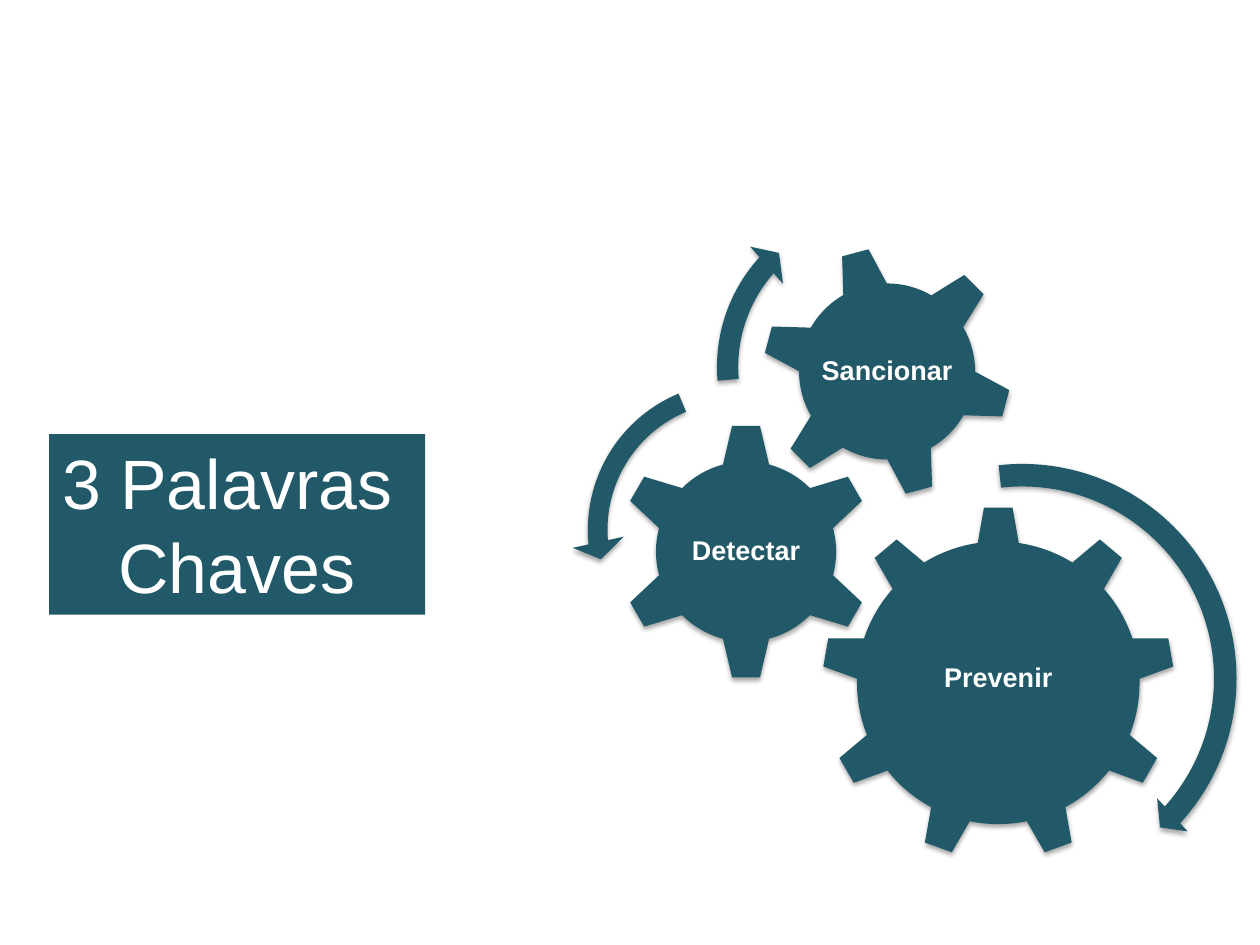
from lxml import etree
from pptx import Presentation
from pptx.dml.color import RGBColor
from pptx.enum.shapes import MSO_SHAPE
from pptx.enum.text import MSO_ANCHOR, MSO_AUTO_SIZE, PP_ALIGN
from pptx.oxml.ns import qn
from pptx.util import Cm, Pt

RECT = MSO_SHAPE.RECTANGLE
GEAR_6, GEAR_9 = MSO_SHAPE.GEAR_6, MSO_SHAPE.GEAR_9
ARROW, LEFT_ARROW = MSO_SHAPE.CIRCULAR_ARROW, MSO_SHAPE.LEFT_CIRCULAR_ARROW
CENTER = PP_ALIGN.CENTER
TOP, MIDDLE = MSO_ANCHOR.TOP, MSO_ANCHOR.MIDDLE
FIT_SHAPE = MSO_AUTO_SIZE.SHAPE_TO_FIT_TEXT

COLORS = {"teal": "215968", "white": "FFFFFF", "shadow": "000000"}
FONT = "Arial"

# Text, gear type, x, y, size, rotation, label width, label height, label shift (cm)
GEARS = [
    ("Prevenir", GEAR_9, 5.56, 7.03, 7.85, 0, 4.7, 4.04, -0.08),
    ("Detectar", GEAR_6, 1.02, 5.18, 5.72, 0, 2.84, 2.82, 0),
    ("Sancionar", GEAR_6, 4.22, 1.24, 5.59, -15, 3.15, 3.15, 0),
]
# Arrow type, x, y, size (cm), adjustments
ARROWS = [
    (ARROW, 5, 5.84, 10.03, (0.05, 2.99, 25.35, 158.22, 0.05)),
    (LEFT_ARROW, 0, 3.91, 7.29, (0.06, 4.3, 104.89, 148.38, 0.08)),
    (ARROW, 2.92, 0, 7.87, (0.06, 3.94, 133.14, 105.08, 0.07)),
]


def color(name):
    return RGBColor.from_string(COLORS[name])


def add_solid(shapes, kind, x, y, w, h):
    s = shapes.add_shape(kind, Cm(x), Cm(y), Cm(w), Cm(h))
    s.shadow.inherit = False
    s.fill.solid()
    s.fill.fore_color.rgb = color("teal")
    s.line.fill.background()
    return s


def add_shadow(s):
    effects = s._element.spPr.find(qn("a:effectLst"))
    shadow = etree.SubElement(effects, qn("a:outerShdw"), blurRad=str(Pt(3.1)),
                              dist=str(Pt(1.8)), dir="5400000", rotWithShape="0")
    tint = etree.SubElement(shadow, qn("a:srgbClr"), val=COLORS["shadow"])
    etree.SubElement(tint, qn("a:alpha"), val="35000")


def add_text(p, text, size, bold=False):
    p.alignment = CENTER
    r = p.add_run()
    r.text = text
    r.font.name = FONT
    r.font.size = Pt(size)
    r.font.bold = bold
    r.font.color.rgb = color("white")


def add_title(sl, x, y, w, h):
    s = add_solid(sl.shapes, RECT, x, y, w, h)
    tf = s.text_frame
    tf.word_wrap = False
    tf.auto_size = FIT_SHAPE
    tf.vertical_anchor = TOP
    add_text(tf.paragraphs[0], "3 Palavras ", 44)
    add_text(tf.add_paragraph(), "Chaves", 44)


def add_label(shapes, text, x, y, w, h):
    tf = shapes.add_textbox(Cm(x), Cm(y), Cm(w), Cm(h)).text_frame
    tf.word_wrap = True
    tf.vertical_anchor = MIDDLE
    tf.margin_left = tf.margin_right = tf.margin_top = tf.margin_bottom = Cm(0.05)
    p = tf.paragraphs[0]
    p.line_spacing = 0.9
    add_text(p, text, 17, bold=True)


def add_gears(sl, left, top):
    shapes = sl.shapes.add_group_shape().shapes

    # Gears, each with an upright label at its centre
    for text, kind, x, y, size, turn, w, h, shift in GEARS:
        s = add_solid(shapes, kind, left + x, top + y, size, size)
        s.rotation = turn
        add_shadow(s)
        add_label(shapes, text, left + x + (size - w) / 2,
                  top + y + (size - h) / 2 + shift, w, h)

    # Arrows showing how the gears turn
    for kind, x, y, size, adjustments in ARROWS:
        s = add_solid(shapes, kind, left + x, top + y, size, size)
        for i, value in enumerate(adjustments):
            s.adjustments[i] = value
        add_shadow(s)


def main():
    prs = Presentation()
    prs.slide_width, prs.slide_height = Cm(28), Cm(21)
    sl = prs.slides.add_slide(prs.slide_layouts[6])
    add_title(sl, 1.09, 9.65, 8.36, 4.01)
    add_gears(sl, 12.7, 4.22)
    prs.save("out.pptx")


if __name__ == "__main__":
    main()
